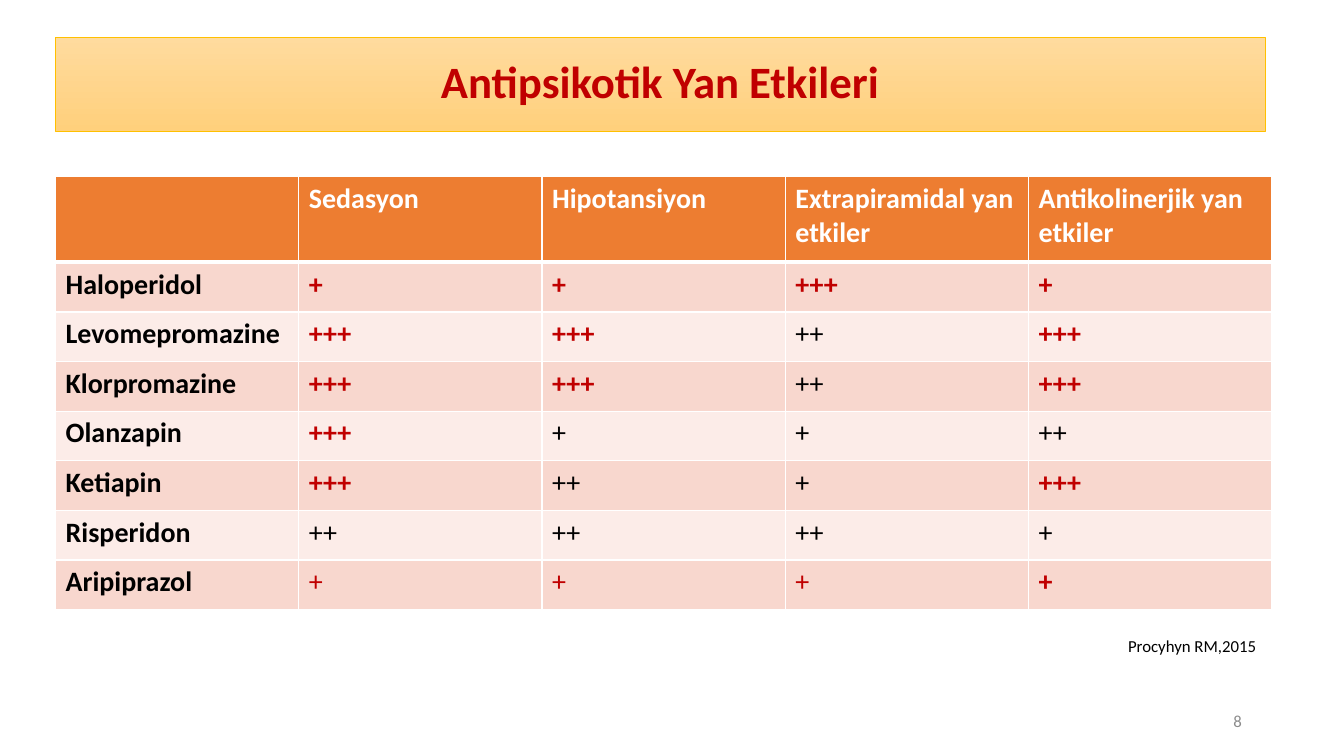
from dataclasses import dataclass

from lxml import etree
from pptx import Presentation
from pptx import util as u
from pptx.dml.color import RGBColor
from pptx.enum import shapes, text
from pptx.oxml import ns


@dataclass(frozen=True)
class Theme:
    """Colours, font and type sizes of the slide."""
    font: str = "Calibri"
    title_size: int = 32
    table_size: int = 20
    small_size: int = 12
    red: str = "C00000"
    black: str = "000000"
    white: str = "FFFFFF"
    grey: str = "8C8C8C"
    gold: str = "FFC000"
    title_top: str = "FFDB9E"
    title_bottom: str = "FFD07C"
    header: str = "ED7D31"
    bands: tuple = ("F8D7CE", "FCECE8")


THEME = Theme()
HEADINGS = ("", "Sedasyon", "Hipotansiyon", "Extrapiramidal yan etkiler", "Antikolinerjik yan etkiler")
MARK_STYLES = {"S": (THEME.red, True), "R": (THEME.red, False), "N": (THEME.black, False)}
DRUGS = (
    ("Haloperidol", ("+", "+", "+++", "+"), "SSSS"),
    ("Levomepromazine", ("+++", "+++", "++", "+++"), "SSNS"),
    ("Klorpromazine", ("+++", "+++", "++", "+++"), "SSNS"),
    ("Olanzapin", ("+++", "+", "+", "++"), "SNNN"),
    ("Ketiapin", ("+++", "++", "+", "+++"), "SNNS"),
    ("Risperidon", ("++", "++", "++", "+"), "NNNN"),
    ("Aripiprazol", ("+", "+", "+", "+"), "RRRS"),
)


def write(frame, words, size, colour, bold=False, align=text.PP_ALIGN.LEFT):
    """Put one formatted paragraph into a text frame."""
    frame.text = words
    frame.word_wrap = True
    paragraph = frame.paragraphs[0]
    paragraph.alignment = align
    for run in paragraph.runs:
        run.font.name = THEME.font
        run.font.size = u.Pt(size)
        run.font.bold = bold
        run.font.color.rgb = RGBColor.from_string(colour)


def add_title(slide, words):
    """Add the gradient title bar."""
    bar = slide.shapes.add_shape(
        shapes.MSO_SHAPE.RECTANGLE, u.Cm(1.4), u.Cm(0.94), u.Cm(30.48), u.Cm(2.36))
    bar.shadow.inherit = False
    bar.fill.gradient()
    bar.fill.gradient_angle = 270
    for stop, colour in zip(bar.fill.gradient_stops, (THEME.title_top, THEME.title_bottom)):
        stop.color.rgb = RGBColor.from_string(colour)
    bar.line.color.rgb = RGBColor.from_string(THEME.gold)
    bar.line.width = u.Pt(0.5)
    write(bar.text_frame, words, THEME.title_size, THEME.red, True, text.PP_ALIGN.CENTER)
    bar.text_frame.vertical_anchor = text.MSO_ANCHOR.MIDDLE
    bar.text_frame.paragraphs[0].line_spacing = 0.9


def add_note(slide, words, left, top, width, height, colour, anchor):
    """Add a small right-aligned text box."""
    box = slide.shapes.add_textbox(u.Cm(left), u.Cm(top), u.Cm(width), u.Cm(height))
    write(box.text_frame, words, THEME.small_size, colour, align=text.PP_ALIGN.RIGHT)
    box.text_frame.vertical_anchor = anchor


def set_borders(cell, top, bottom):
    """Draw white borders, with the given top and bottom widths in points."""
    properties = cell._tc.get_or_add_tcPr()
    for side, width in (("L", 1), ("R", 1), ("T", top), ("B", bottom)):
        line = etree.SubElement(properties, ns.qn(f"a:ln{side}"), w=str(u.Pt(width)))
        fill = etree.SubElement(line, ns.qn("a:solidFill"))
        etree.SubElement(fill, ns.qn("a:srgbClr"), val=THEME.white)


def fill_cell(cell, words, background, colour, bold, top=1, bottom=1):
    """Set the borders, background and text of a table cell."""
    set_borders(cell, top, bottom)
    cell.fill.solid()
    cell.fill.fore_color.rgb = RGBColor.from_string(background)
    write(cell.text_frame, words, THEME.table_size, colour, bold)


def add_effects_table(slide):
    """Add the table of drugs and their side effects."""
    header_height, row_height, column_width = u.Cm(2.16), u.Cm(1.25), u.Cm(6.13)
    table = slide.shapes.add_table(
        len(DRUGS) + 1, len(HEADINGS), u.Cm(1.4), u.Cm(4.45),
        column_width * len(HEADINGS), header_height + row_height * len(DRUGS)).table
    for column in table.columns:
        column.width = column_width
    for row in table.rows:
        row.height = row_height
    table.rows[0].height = header_height
    for column, heading in enumerate(HEADINGS):
        fill_cell(table.cell(0, column), heading, THEME.header, THEME.white, True, bottom=3)
    for row, (drug, marks, styles) in enumerate(DRUGS, 1):
        band = THEME.bands[(row - 1) % 2]
        top = 3 if row == 1 else 1
        fill_cell(table.cell(row, 0), drug, band, THEME.black, True, top)
        for column, (mark, style) in enumerate(zip(marks, styles), 1):
            fill_cell(table.cell(row, column), mark, band, *MARK_STYLES[style], top)


def main():
    """Build and save the slide."""
    presentation = Presentation()
    presentation.slide_width, presentation.slide_height = u.Cm(33.87), u.Cm(19.05)
    slide = presentation.slides.add_slide(presentation.slide_layouts[6])
    add_title(slide, "Antipsikotik Yan Etkileri")
    add_effects_table(slide)
    add_note(slide, "8", 23.93, 17.65, 7.62, 1.02, THEME.grey, text.MSO_ANCHOR.MIDDLE)
    add_note(slide, "Procyhyn RM,2015", 16.54, 15.9, 15.37, 0.76, THEME.black, text.MSO_ANCHOR.TOP)
    presentation.save("out.pptx")


if __name__ == "__main__":
    main()
